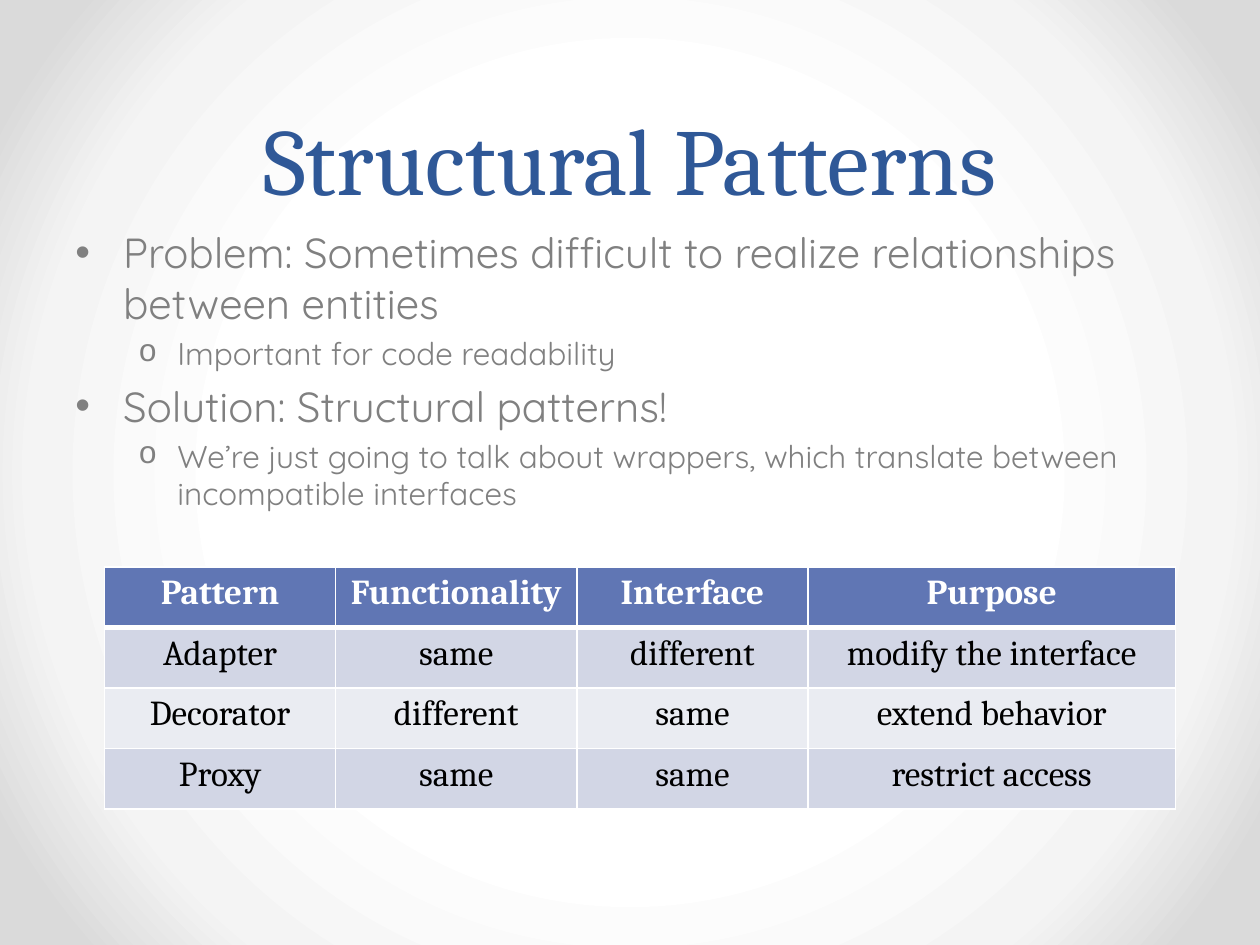
from lxml import etree
from pptx import Presentation
from pptx.dml.color import RGBColor
from pptx.enum.text import MSO_ANCHOR as Anchor, PP_ALIGN as Align
from pptx.oxml import parse_xml
from pptx.oxml.ns import nsdecls, qn
from pptx.util import Inches, Pt

SERIF, SANS = "Cambria", "Quicksand"
BLUE, GREY, WHITE, BLACK = "2F5897", "808080", "FFFFFF", "000000"
HEADER_FILL, BAND_FILLS = "6076B4", ("D2D6E5", "EAECF2")
BACKDROP_STOPS = ((50, WHITE), (76, "F4F4F4"), (92, "DADADA"))

# Per outline level: size, left margin, indent, bullet, bullet font
LEVELS = (
    (24, 0.38, -0.38, "•", "Arial"),
    (18, 0.81, -0.31, "o", "Courier New"),
)
OUTLINE = (
    (0, "Problem: Sometimes difficult to realize relationships between entities"),
    (1, "Important for code readability"),
    (0, "Solution: Structural patterns!"),
    (1, "We’re just going to talk about wrappers, which translate between "
        "incompatible interfaces"),
)
PATTERNS = (
    ("Pattern", "Functionality", "Interface", "Purpose"),
    ("Adapter", "same", "different", "modify the interface"),
    ("Decorator", "different", "same", "extend behavior"),
    ("Proxy", "same", "same", "restrict access"),
)
COLUMN_SHARES = (22, 23, 22, 35)


def color(hex_code):
    return RGBColor.from_string(hex_code)


def style(paragraph, size, face, hex_code, bold=False):
    for run in paragraph.runs:
        font = run.font
        font.size, font.name, font.bold = Pt(size), face, bold
        font.color.rgb = color(hex_code)


def add_text_frame(slide, box, anchor):
    frame = slide.shapes.add_textbox(*map(Inches, box)).text_frame
    frame.word_wrap = True
    frame.vertical_anchor = anchor
    return frame


def paint_backdrop(slide):
    """Radial gradient from a white centre to grey corners."""
    fill = slide.background.fill
    fill.solid()
    stops = "".join(
        f'<a:gs pos="{share * 1000}"><a:srgbClr val="{shade}"/></a:gs>'
        for share, shade in BACKDROP_STOPS)
    gradient = parse_xml(
        f'<a:gradFill {nsdecls("a")} rotWithShape="1"><a:gsLst>{stops}</a:gsLst>'
        '<a:path path="circle"><a:fillToRect l="50000" t="50000" r="50000" b="50000"/>'
        '</a:path></a:gradFill>')
    solid = next(slide.element.iter(qn("a:solidFill")))
    solid.getparent().replace(solid, gradient)


def add_title(slide, box):
    title = add_text_frame(slide, box, Anchor.BOTTOM).paragraphs[0]
    title.text = "Structural Patterns"
    title.alignment = Align.CENTER
    title.line_spacing = Pt(58)
    style(title, 54, SERIF, BLUE)


def add_outline(slide, box):
    frame = add_text_frame(slide, box, Anchor.TOP)
    frame.text = "\n".join(text for _, text in OUTLINE)
    for point, (level, _) in zip(frame.paragraphs, OUTLINE):
        size, margin, indent, bullet, bullet_face = LEVELS[level]
        point.level = level
        point.space_before = Pt(size * 0.2)
        style(point, size, SANS, GREY)
        # Hanging bullet
        properties = point._p.get_or_add_pPr()
        properties.set("marL", str(Inches(margin)))
        properties.set("indent", str(Inches(indent)))
        etree.SubElement(properties, qn("a:buFont"), typeface=bullet_face)
        etree.SubElement(properties, qn("a:buChar"), char=bullet)


def add_borders(cell, top, bottom):
    properties = cell._tc.get_or_add_tcPr()
    for side, width in (("L", 1), ("R", 1), ("T", top), ("B", bottom)):
        properties.append(parse_xml(
            f'<a:ln{side} {nsdecls("a")} w="{Pt(width)}"><a:solidFill>'
            f'<a:srgbClr val="{WHITE}"/></a:solidFill></a:ln{side}>'))


def add_pattern_table(slide, box):
    table = slide.shapes.add_table(
        len(PATTERNS), len(COLUMN_SHARES), *map(Inches, box)).table
    table.horz_banding = False
    for column, share in zip(table.columns, COLUMN_SHARES):
        column.width = Inches(box[2] * share / sum(COLUMN_SHARES))
    for r, labels in enumerate(PATTERNS):
        header = r == 0
        for c, label in enumerate(labels):
            cell = table.cell(r, c)
            # A thick rule parts the header from the body
            add_borders(cell, top=3 if r == 1 else 1, bottom=3 if header else 1)
            cell.fill.solid()
            cell.fill.fore_color.rgb = color(
                HEADER_FILL if header else BAND_FILLS[(r - 1) % 2])
            cell.text_frame.text = label
            entry = cell.text_frame.paragraphs[0]
            entry.alignment = Align.CENTER
            entry.space_before = Pt(6)
            style(entry, 20, SERIF, WHITE if header else BLACK, header)


def main():
    deck = Presentation()
    deck.slide_width, deck.slide_height = Inches(10), Inches(7.5)
    slide = deck.slides.add_slide(deck.slide_layouts[6])
    margin, title_height, content_width = 0.5, 1.75, 9
    paint_backdrop(slide)
    add_title(slide, (margin, 0, content_width, title_height))
    add_outline(slide, (margin, title_height, content_width, 4.95))
    add_pattern_table(slide, (0.83, 4.5, 8.5, 1.92))
    deck.save("out.pptx")


if __name__ == "__main__":
    main()
